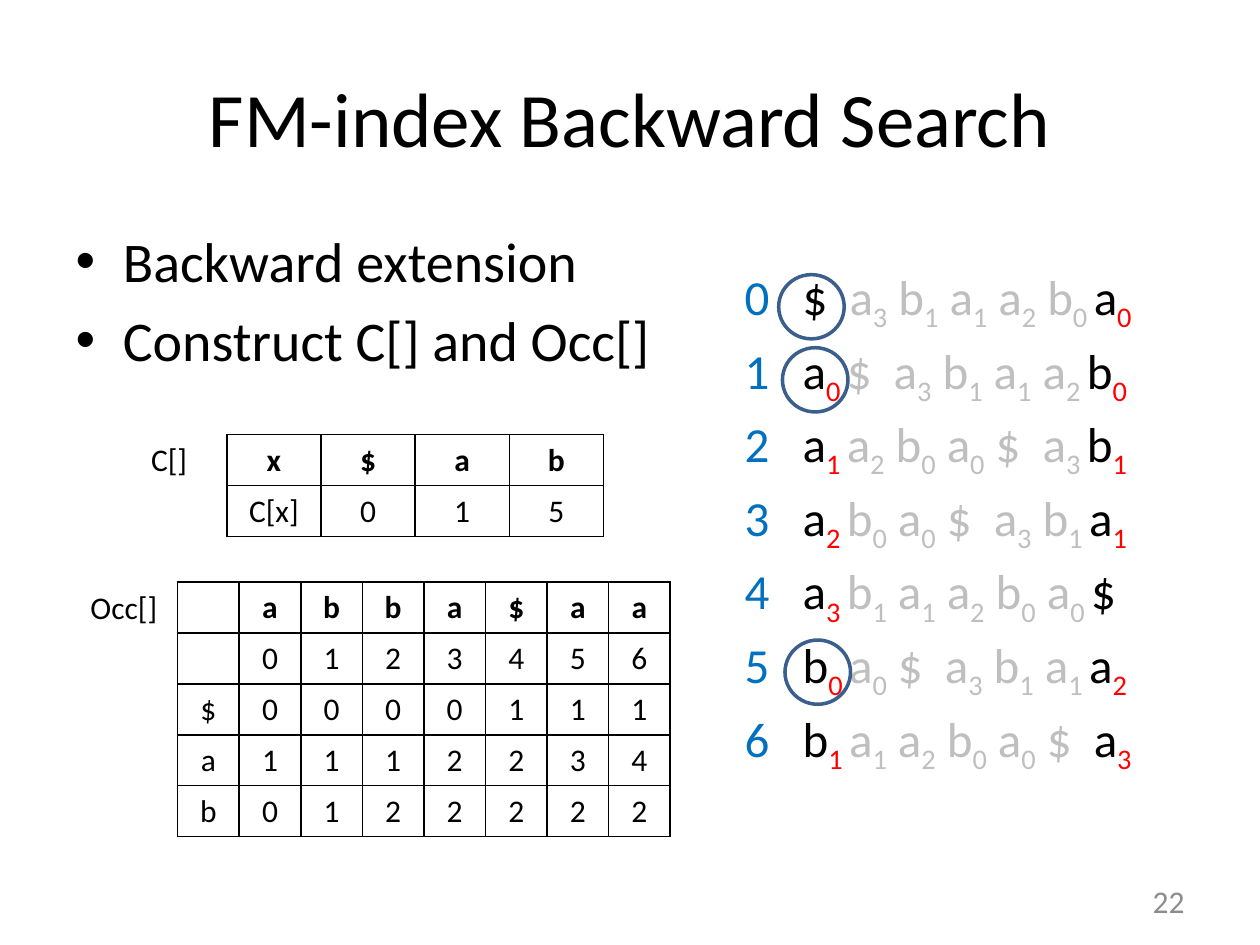
from lxml import etree
from pptx import Presentation
from pptx import util as u
from pptx.dml.color import RGBColor
from pptx.enum import shapes, text
from pptx.oxml.ns import qn

COLORS = {"ink": "000000", "index": "0070C0", "rank": "FF0000", "faded": "BFBFBF",
          "ring": "3A5F8C", "number": "8C8C8C", "white": "FFFFFF"}
FONT = "Calibri"
SUBSCRIPT = -25
CENTER, RIGHT = text.PP_ALIGN.CENTER, text.PP_ALIGN.RIGHT
MIDDLE = text.MSO_ANCHOR.MIDDLE

CYCLE = ["$", "a3", "b1", "a1", "a2", "b0", "a0"]
SORTED_STARTS = [0, 6, 3, 4, 1, 5, 2]
C_ROWS = [["x", "$", "a", "b"], ["C[x]", "0", "1", "5"]]
OCC_ROWS = [["", *"abba$aa"], ["", *"0123456"], [*"$0000111"], [*"a1112234"], [*"b0122222"]]


def set_all(obj, values):
    for name, value in values.items():
        setattr(obj, name, value)


def add_run(p, content, size, color="ink", bold=False, baseline=0):
    r = p.add_run()
    r.text = content
    set_all(r.font, {"name": FONT, "size": u.Pt(size), "bold": bold})
    r.font.color.rgb = RGBColor.from_string(COLORS[color])
    if baseline:
        r.font._element.set("baseline", str(baseline * 1000))


def add_label(slide, box, content, size=18, color="ink", wrap=False, align=None, anchor=None):
    tf = slide.shapes.add_textbox(*map(u.Inches, box)).text_frame
    set_all(tf, {"word_wrap": wrap, "vertical_anchor": anchor})
    p = tf.paragraphs[0]
    p.alignment = align
    add_run(p, content, size, color)


def border_cell(cell, color):
    tc_pr = cell._tc.get_or_add_tcPr()
    for side in ("lnL", "lnR", "lnT", "lnB"):
        ln = etree.SubElement(tc_pr, qn(f"a:{side}"), w=str(u.Pt(1)))
        fill = etree.SubElement(ln, qn("a:solidFill"))
        etree.SubElement(fill, qn("a:srgbClr"), val=COLORS[color])
    cell.fill.background()


def add_grid(slide, box, rows, cols, border):
    table = slide.shapes.add_table(rows, cols, *map(u.Inches, box)).table
    set_all(table, {"first_row": False, "horz_banding": False})
    for cell in table.iter_cells():
        border_cell(cell, border)
    return table


def add_values(slide, box, rows):
    table = add_grid(slide, box, len(rows), len(rows[0]), "ink")
    for i, row in enumerate(rows):
        for j, value in enumerate(row):
            p = table.cell(i, j).text_frame.paragraphs[0]
            p.alignment = CENTER
            if value:
                add_run(p, value, 18, bold=i == 0)


def add_rotation(p, index, symbols):
    add_run(p, str(index), 28, "index")
    add_run(p, "   ", 28)
    last = len(symbols) - 1
    for k, symbol in enumerate(symbols):
        edge = k in (0, last)
        letter, rank = symbol[0], symbol[1:]
        add_run(p, letter, 28, "ink" if edge else "faded")
        if rank:
            add_run(p, rank, 28, "rank" if edge else "faded", baseline=SUBSCRIPT)
        if k < last:
            tight = rank and k in (0, last - 1)
            gap = " " if rank else "  "
            add_run(p, gap, 28, "faded", baseline=SUBSCRIPT if tight else 0)


def add_rotations(slide, box):
    table = add_grid(slide, box, len(SORTED_STARTS), 1, "white")
    inset = u.Inches(0.01)
    for i, start in enumerate(SORTED_STARTS):
        cell = table.cell(i, 0)
        set_all(cell, {"margin_left": inset, "margin_right": inset, "margin_top": inset,
                       "margin_bottom": 0, "vertical_anchor": MIDDLE})
        add_rotation(cell.text_frame.paragraphs[0], i, CYCLE[start:] + CYCLE[:start])


def add_ring(slide, left, top):
    sp = slide.shapes.add_shape(shapes.MSO_SHAPE.OVAL, *map(u.Inches, (left, top, 0.52, 0.51)))
    sp.shadow.inherit = False
    sp.fill.background()
    sp.line.width = u.Pt(2)
    sp.line.color.rgb = RGBColor.from_string(COLORS["ring"])


def fill_placeholder(sp, box, lines, size):
    set_all(sp, dict(zip(("left", "top", "width", "height"), map(u.Inches, box))))
    tf = sp.text_frame
    for i, line in enumerate(lines):
        p = tf.add_paragraph() if i else tf.paragraphs[0]
        add_run(p, line, size)


def main():
    prs = Presentation()
    set_all(prs, {"slide_width": u.Inches(10), "slide_height": u.Inches(7.5)})
    s = prs.slides.add_slide(prs.slide_layouts[1])
    fill_placeholder(s.shapes.title, (0.5, 0.3, 9, 1.25), ["FM-index Backward Search"], 44)
    fill_placeholder(s.placeholders[1], (0.5, 1.75, 9, 4.95),
                     ["Backward extension", "Construct C[] and Occ[]"], 32)
    add_label(s, (7.17, 6.95, 2.33, 0.4), "22", color="number", wrap=True,
              align=RIGHT, anchor=MIDDLE)
    add_rotations(s, (5.9, 2.1, 3.54, 4.09))
    add_values(s, (1.8, 3.45, 2.99, 0.81), C_ROWS)
    add_values(s, (1.41, 4.62, 3.91, 2.02), OCC_ROWS)
    add_label(s, (1.1, 3.44, 0.55, 0.4), "C[]")
    add_label(s, (0.62, 4.62, 0.74, 0.4), "Occ[]")
    for left, top in ((6.18, 2.18), (6.21, 2.76), (6.23, 5.08)):
        add_ring(s, left, top)
    prs.save("out.pptx")


if __name__ == "__main__":
    main()
